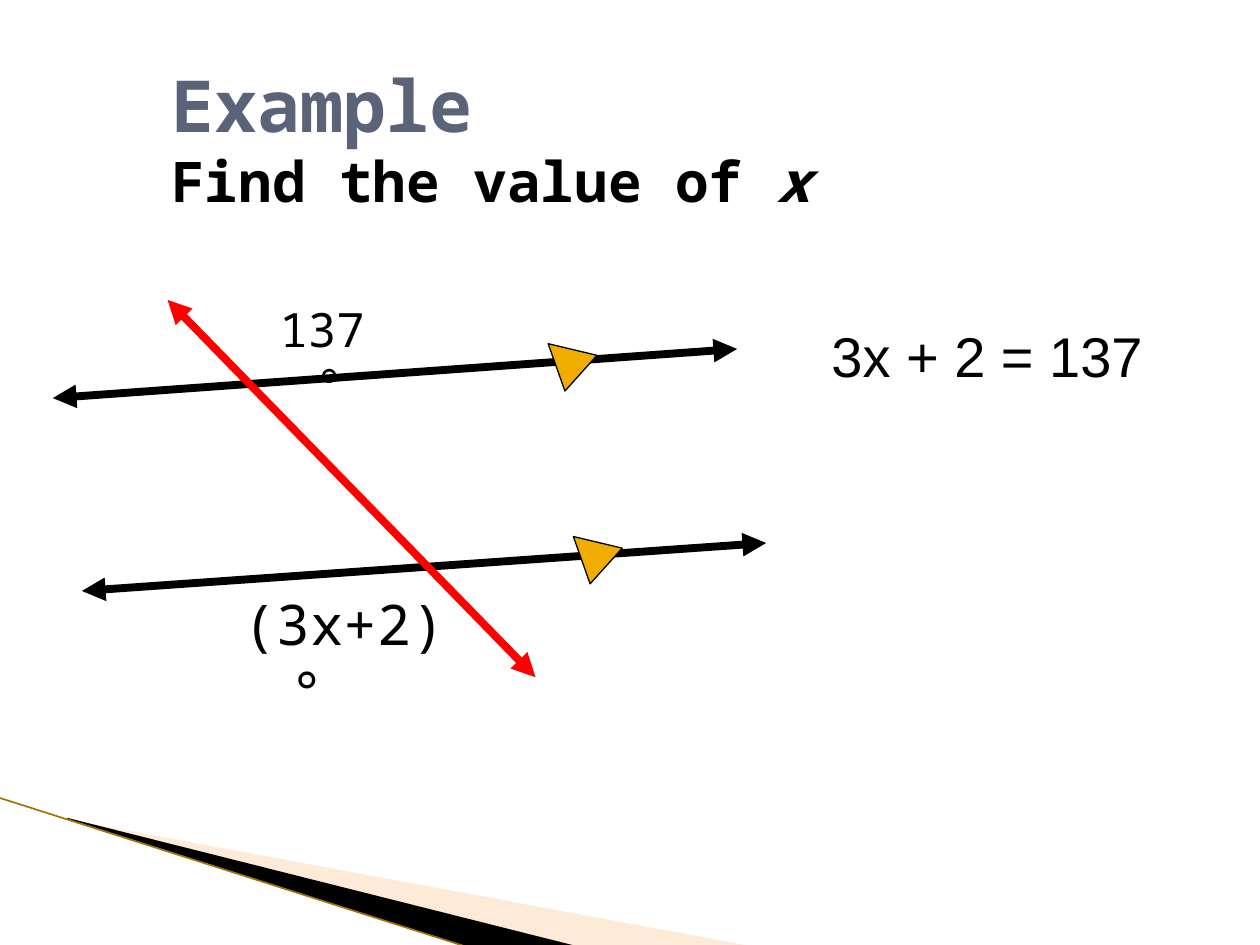
from lxml import etree
from pptx import Presentation
from pptx.dml.color import RGBColor
from pptx.enum import shapes, text
from pptx.oxml import ns
from pptx.util import Pt

MONO = "Noto Sans Mono"
BLACK, RED, GOLD, SLATE = "000000", "FF0000", "F0AD00", "5A6378"

# Footer decoration: outline points, colour, opacity in percent
WEDGES = [
    ([(39.6, 468.5), (428.4, 540.5), (328.3, 540.5), (39.6, 468)], "FCCF9B", 40),
    ([(38.2, 467.3), (329, 540.5), (267.8, 541.2), (38.9, 468)], BLACK, 100),
]
EDGE = ((-0.7, 455.8), (267.1, 541.2), "A07400", 0.95)

# Diagram: start, end, colour, width
ARROWS = [
    ((30.2, 227.5), (421.2, 199.4), BLACK, 4.5),
    ((46.8, 337.7), (437.8, 310.3), BLACK, 4.5),
    ((95.8, 171.4), (306, 387), RED, 4.5),
]
PARALLEL_MARKS = [(308.9, 192.2), (323.3, 302.4)]
MARK_SIZE = (27.4, 25.2)

# Text: place, spans of (words, format)
TITLE = ((90.7, 18, 613.4, 121), [
    ("Example\v", dict(name=MONO, size=Pt(41), bold=True), SLATE),
    ("Find the value of ", dict(name=MONO, size=Pt(32), bold=True), BLACK),
    ("x", dict(name=MONO, size=Pt(32), bold=True, italic=True), BLACK),
])
TOP_ANGLE = ((144, 167.8, 87.1, 56.9), [("137°", dict(name=MONO, size=Pt(27)), BLACK)])
LOW_ANGLE = ((131.8, 333.4, 138.2, 48.2), [("(3x+2)°", dict(name=MONO, size=Pt(32)), BLACK)])
EQUATION = ((468, 180, 193.7, 46), [("3x + 2 = 137", dict(name="Arial", size=Pt(32)), BLACK)])


def colour(value):
    return RGBColor.from_string(value)


def add_child(parent, tag, **attributes):
    return etree.SubElement(parent, ns.qn(tag), attributes)


def fill_solid(shape, value):
    shape.shadow.inherit = False
    shape.fill.solid()
    shape.fill.fore_color.rgb = colour(value)


def add_line(page, start, end, value, width, arrows=False):
    line = page.shapes.add_connector(
        shapes.MSO_CONNECTOR.STRAIGHT, *(Pt(n) for n in start + end))
    line.line.color.rgb = colour(value)
    line.line.width = Pt(width)
    if arrows:
        for tag in ("a:headEnd", "a:tailEnd"):
            add_child(line.line._get_or_add_ln(), tag, type="triangle")
    add_child(line._element.spPr, "a:effectLst")


def add_wedge(page, points, value, opacity):
    corners = [(Pt(x), Pt(y)) for x, y in points]
    builder = page.shapes.build_freeform(*corners[0])
    builder.add_line_segments(corners[1:], close=True)
    wedge = builder.convert_to_shape()
    fill_solid(wedge, value)
    wedge.line.fill.background()
    if opacity < 100:
        tint = wedge._element.spPr.find(".//" + ns.qn("a:srgbClr"))
        add_child(tint, "a:alpha", val=str(opacity * 1000))


def write(box, content, indent=None, wrap=True, anchor=text.MSO_ANCHOR.TOP,
          fit=text.MSO_AUTO_SIZE.NONE):
    """Place the box and fill it; indent is (left margin, first line)."""
    place, spans = content
    box.left, box.top, box.width, box.height = (Pt(n) for n in place)
    frame = box.text_frame
    frame.word_wrap, frame.vertical_anchor, frame.auto_size = wrap, anchor, fit
    para = frame.paragraphs[0]
    para.alignment = text.PP_ALIGN.LEFT
    para.space_before = Pt(0)
    if indent:
        properties = para._p.get_or_add_pPr()
        for name, length in zip(("marL", "indent"), indent):
            properties.set(name, str(Pt(length)))
        add_child(properties, "a:buNone")
    for words, style, value in spans:
        span = para.add_run()
        span.text = words.rstrip("\v")
        for name, setting in style.items():
            setattr(span.font, name, setting)
        span.font.color.rgb = colour(value)
        if words.endswith("\v"):
            para.add_line_break()


def main():
    deck = Presentation()
    deck.slide_width, deck.slide_height = Pt(720), Pt(540)
    page = deck.slides.add_slide(deck.slide_layouts[1])

    for wedge in WEDGES:
        add_wedge(page, *wedge)
    add_line(page, *EDGE)

    write(page.placeholders[1], TOP_ANGLE, indent=(28.8, -20.2))
    write(page.shapes.title, TITLE, anchor=text.MSO_ANCHOR.MIDDLE)

    for arrow in ARROWS:
        add_line(page, *arrow, arrows=True)
    for corner in PARALLEL_MARKS:
        mark = page.shapes.add_shape(
            shapes.MSO_SHAPE.ISOSCELES_TRIANGLE, *(Pt(n) for n in corner + MARK_SIZE))
        mark.rotation = 312
        fill_solid(mark, GOLD)
        mark.line.color.rgb = colour(BLACK)
        mark.line.width = Pt(0.75)

    write(page.shapes.add_textbox(0, 0, 0, 0), LOW_ANGLE, indent=(27, -27))
    write(page.shapes.add_textbox(0, 0, 0, 0), EQUATION, wrap=False,
          fit=text.MSO_AUTO_SIZE.SHAPE_TO_FIT_TEXT)
    deck.save("out.pptx")


if __name__ == "__main__":
    main()
